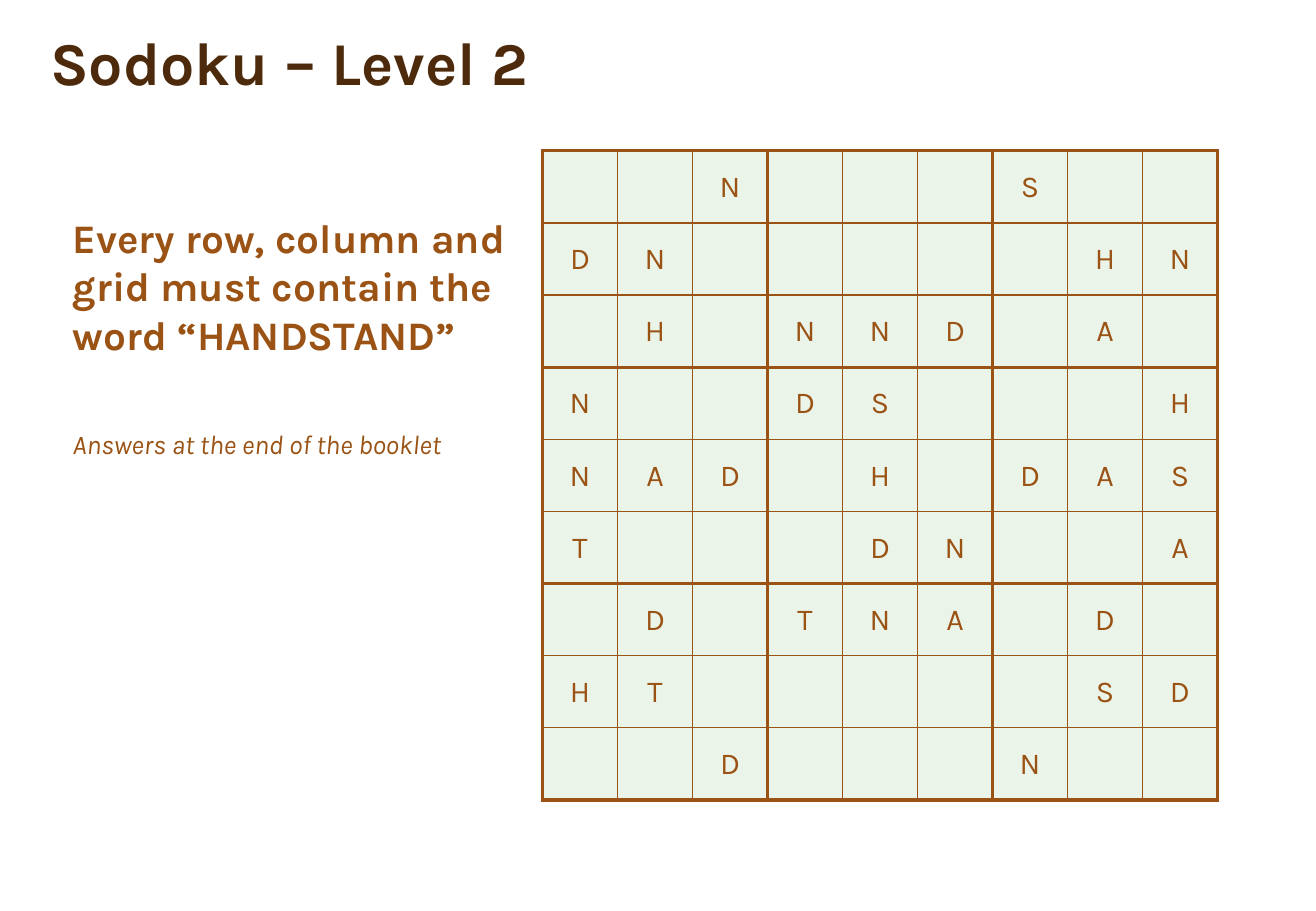
from lxml import etree
from pptx import Presentation
from pptx.dml.color import RGBColor
from pptx.enum.text import MSO_ANCHOR, PP_ALIGN
from pptx.oxml.ns import qn
from pptx.util import Pt

BOTTOM, MIDDLE = MSO_ANCHOR.BOTTOM, MSO_ANCHOR.MIDDLE
CENTER, LEFT = PP_ALIGN.CENTER, PP_ALIGN.LEFT

COLORS = {"title": "4D2A0B", "text": "9A5315", "cell": "EBF4E8"}
BLOCK = 3
THIN, THICK = 1, 2.25
PUZZLE = [
    "..N...S..",
    "DN.....HN",
    ".H.NND.A.",
    "N..DS...H",
    "NAD.H.DAS",
    "T...DN..A",
    ".D.TNA.D.",
    "HT.....SD",
    "..D...N..",
]


class PuzzleSlide:
    """Hold the puzzle style and the slide being built."""

    def __init__(self, presentation, font_name):
        self.font_name = font_name
        self.slide = presentation.slides.add_slide(presentation.slide_layouts[5])

    def format(self, paragraph, size, color="text", bold=False, italic=False, align=LEFT):
        paragraph.alignment = align
        font = paragraph.font
        font.name, font.size, font.bold, font.italic = self.font_name, Pt(size), bold, italic
        font.color.rgb = RGBColor.from_string(COLORS[color])

    def title(self, text, left, top, width, height):
        shape = self.slide.shapes.title
        shape.left, shape.top, shape.width, shape.height = map(Pt, (left, top, width, height))
        frame = shape.text_frame
        frame.text = text
        frame.vertical_anchor = BOTTOM
        paragraph = frame.paragraphs[0]
        paragraph.line_spacing = 0.9
        self.format(paragraph, 36, "title", bold=True)

    def instructions(self, rule, hint, left, top, width, height):
        frame = self.slide.shapes.add_textbox(*map(Pt, (left, top, width, height))).text_frame
        frame.word_wrap = True
        rule_paragraph, hint_paragraph = frame.paragraphs[0], frame.add_paragraph()
        rule_paragraph.text, hint_paragraph.text = rule, hint
        rule_paragraph.space_after = Pt(41)
        self.format(rule_paragraph, 24, bold=True)
        self.format(hint_paragraph, 16, italic=True)

    def border(self, cell, side, width):
        properties = cell._tc.get_or_add_tcPr()
        line = etree.SubElement(properties, qn(f"a:ln{side}"), w=str(Pt(width)))
        fill = etree.SubElement(line, qn("a:solidFill"))
        etree.SubElement(fill, qn("a:srgbClr"), val=COLORS["text"])

    def cell(self, cell, letter, row, column):
        edges = {"L": column, "R": column + 1, "T": row, "B": row + 1}
        for side, edge in edges.items():
            self.border(cell, side, THIN if edge % BLOCK else THICK)
        cell.fill.solid()
        cell.fill.fore_color.rgb = RGBColor.from_string(COLORS["cell"])
        cell.margin_left = cell.margin_right = cell.margin_top = Pt(0.72)
        cell.margin_bottom = 0
        cell.vertical_anchor = MIDDLE
        cell.text = letter.strip(".")
        self.format(cell.text_frame.paragraphs[0], 18, align=CENTER)

    def grid(self, rows, left, top, cell_width, cell_height):
        size = len(rows)
        bounds = (left, top, size * cell_width, size * cell_height)
        table = self.slide.shapes.add_table(size, size, *map(Pt, bounds)).table
        table.first_row = table.horz_banding = False
        for row, letters in enumerate(rows):
            table.rows[row].height = Pt(cell_height)
            table.columns[row].width = Pt(cell_width)
            for column, letter in enumerate(letters):
                self.cell(table.cell(row, column), letter, row, column)


def main():
    presentation = Presentation()
    presentation.slide_width, presentation.slide_height = Pt(780), Pt(540)
    puzzle = PuzzleSlide(presentation, "Karla")
    puzzle.title("Sodoku – Level 2", 22.5, 0, 644, 62)
    puzzle.instructions(
        "Every row, column and grid must contain the word “HANDSTAND”",
        "Answers at the end of the booklet",
        36, 122.5, 285, 204,
    )
    puzzle.grid(PUZZLE, 321.6, 89.4, 44.45, 42.75)
    presentation.save("out.pptx")


if __name__ == "__main__":
    main()
